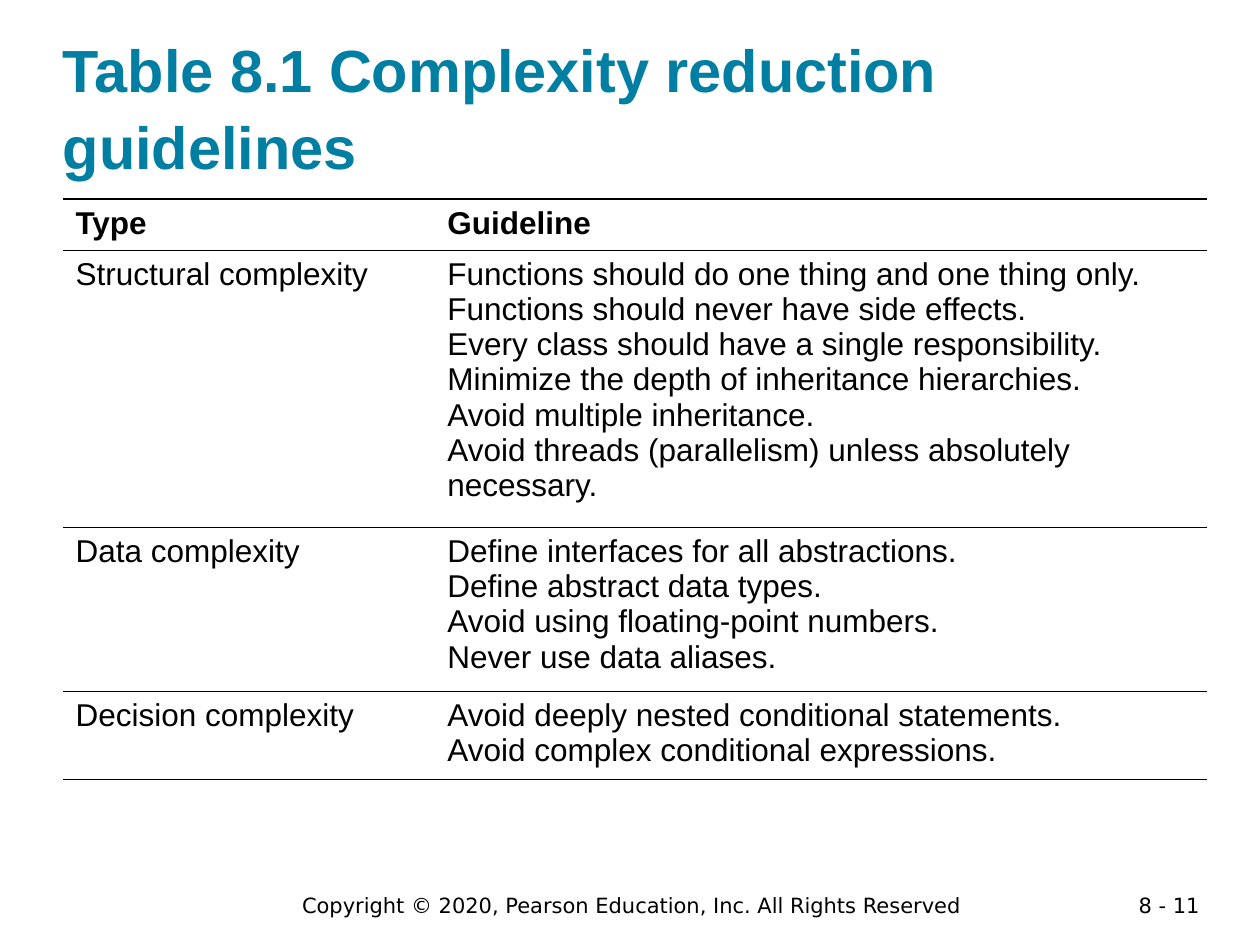
from pptx import Presentation
from pptx.dml.color import RGBColor
from pptx.enum.text import MSO_ANCHOR, PP_ALIGN
from pptx.oxml.ns import qn
from pptx.util import Pt
from lxml.etree import SubElement

NO_STYLE = "{2D5ABB26-0587-4C30-8999-92F81FD0307C}"
TITLE = {"name": "Arial", "size": Pt(34), "bold": True}
HEADER = {"name": "Arial", "size": Pt(18), "bold": True}
BODY = {**HEADER, "bold": False}
FOOTER = {"name": "DejaVu Sans", "size": Pt(12), "bold": False}

ROWS = [
    ("Type", ["Guideline"]),
    ("Structural complexity", [
        "Functions should do one thing and one thing only.",
        "Functions should never have side effects.",
        "Every class should have a single responsibility.",
        "Minimize the depth of inheritance hierarchies.",
        "Avoid multiple inheritance.",
        "Avoid threads (parallelism) unless absolutely necessary.",
    ]),
    ("Data complexity", [
        "Define interfaces for all abstractions.",
        "Define abstract data types.",
        "Avoid using floating-point numbers.",
        "Never use data aliases.",
    ]),
    ("Decision complexity", [
        "Avoid deeply nested conditional statements.",
        "Avoid complex conditional expressions.",
    ]),
]
ROW_HEIGHTS = [29.2, 148, 87.6, 47.4]
RULED_BELOW = {0, 1, 3}


def color(value):
    return RGBColor.from_string(value)


def write(tf, lines, fmt, fill="000000", align=PP_ALIGN.LEFT):
    for i, line in enumerate(lines):
        p = tf.paragraphs[0] if i == 0 else tf.add_paragraph()
        p.alignment = align
        r = p.add_run()
        r.text = line
        for key, value in fmt.items():
            setattr(r.font, key, value)
        r.font.color.rgb = color(fill)


def add_box(s, box):
    tf = s.shapes.add_textbox(*map(Pt, box)).text_frame
    tf.word_wrap = True
    return tf


def add_title(s, box, text):
    tf = add_box(s, box)
    tf.vertical_anchor = MSO_ANCHOR.BOTTOM
    for side in ("left", "top", "right", "bottom"):
        setattr(tf, f"margin_{side}", 0)
    write(tf, [text], TITLE, "007FA3")
    tf.paragraphs[0].line_spacing = 1.08


def rule(cell, side):
    ln = SubElement(cell._tc.get_or_add_tcPr(), qn(f"a:{side}"), w=str(Pt(1)))
    fill = SubElement(ln, qn("a:solidFill"))
    SubElement(fill, qn("a:srgbClr"), val="000000")


def add_guidelines(s, box):
    left, top, width, height = box
    frame = s.shapes.add_table(len(ROWS), 2, Pt(left), Pt(top), Pt(width), Pt(height))
    table = frame.table
    table.horz_banding = False
    table._tbl.tblPr.find(qn("a:tableStyleId")).text = NO_STYLE
    type_width = 212.5
    for col, w in zip(table.columns, (type_width, width - type_width)):
        col.width = Pt(w)
    for i, (kind, guidelines) in enumerate(ROWS):
        table.rows[i].height = Pt(ROW_HEIGHTS[i])
        for j, lines in enumerate(([kind], guidelines)):
            cell = table.cell(i, j)
            write(cell.text_frame, lines, BODY if i else HEADER)
            if i == 0 or i - 1 in RULED_BELOW:
                rule(cell, "lnT")
            if i in RULED_BELOW:
                rule(cell, "lnB")
            cell.fill.background()


def add_footer(s, box, text, align):
    write(add_box(s, box), [text], FOOTER, align=align)


def main():
    prs = Presentation()
    prs.slide_width, prs.slide_height = Pt(720), Pt(540)
    s = prs.slides.add_slide(prs.slide_layouts[6])
    add_title(s, (36, 17.3, 648, 86.4), "Table 8.1 Complexity reduction guidelines")
    add_guidelines(s, (36, 113.8, 653.8, sum(ROW_HEIGHTS)))
    add_footer(s, (118, 506.2, 486, 21.6),
               "Copyright © 2020, Pearson Education, Inc. All Rights Reserved", PP_ALIGN.CENTER)
    add_footer(s, (620.6, 506.2, 72, 15.8), "8 - 11", PP_ALIGN.RIGHT)
    prs.save("out.pptx")


if __name__ == "__main__":
    main()
